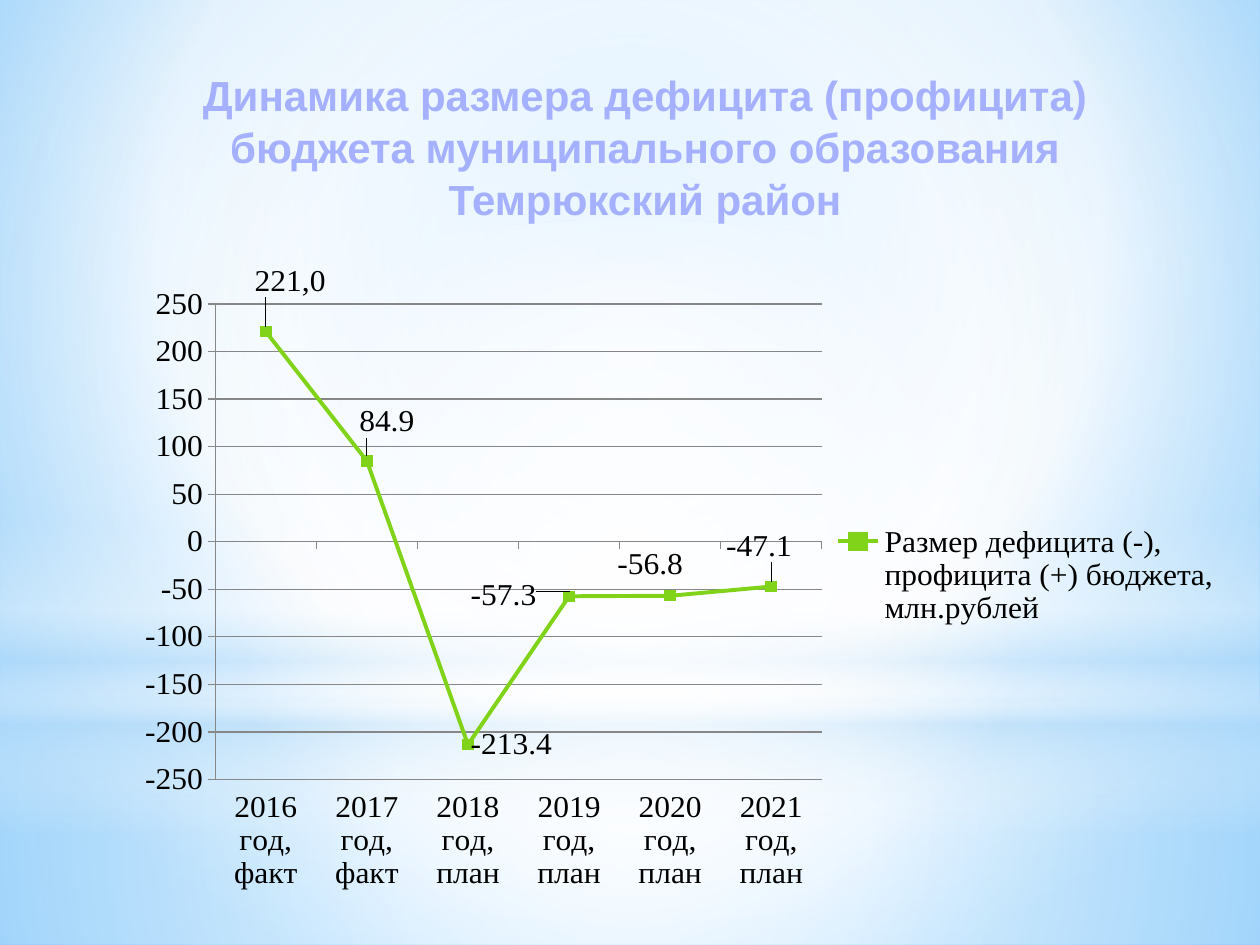
from dataclasses import dataclass
from typing import Optional

from lxml import etree
from pptx import Presentation
from pptx import util as u
from pptx.chart.data import CategoryChartData
from pptx.dml.color import RGBColor
from pptx.enum import chart as charts, shapes, text
from pptx.oxml import parse_xml
from pptx.oxml.ns import nsdecls, qn

PX = 914400 / 126
GREEN, BLACK, GREY, LILAC = "81D31A", "000000", "878787", "A5B0FF"
CENTRE = (50, 50, 50, 50)


@dataclass(frozen=True)
class Stop:
    at: int
    colour: str
    opacity: int = 100


@dataclass(frozen=True)
class Glow:
    """A borderless gradient area; a circle when focus is set, else top to bottom."""
    top: int
    height: int
    stops: tuple[Stop, ...]
    focus: Optional[tuple[int, int, int, int]] = CENTRE
    preset: shapes.MSO_SHAPE = shapes.MSO_SHAPE.RECTANGLE


@dataclass(frozen=True)
class Year:
    name: str
    balance: float
    label_dx: int
    label_dy: int
    label: str = ""


BACKDROP = (Stop(0, "9ED5FF"), Stop(60, "FFFFFF"), Stop(100, "5BB9FF"))
GLOWS = (
    Glow(703, 242, (Stop(0, "FFFFFF", 91), Stop(37, "FFFFFF", 76), Stop(100, "B4DCFA", 79))),
    Glow(0, 703, (Stop(0, "FFFFFF", 89), Stop(48, "FFFFFF", 62), Stop(100, "B4DCFA", 79))),
    Glow(519, 315, (Stop(0, "FFFFFF", 0), Stop(29, "FFFFFF", 30), Stop(45, "B4DCFA", 40),
                    Stop(55, "FFFFFF", 26), Stop(65, "B4DCFA", 60), Stop(100, "FFFFFF", 0)), None),
    Glow(220, 703, (Stop(0, "FFFFFF"), Stop(56, "FFFFFF", 0)), preset=shapes.MSO_SHAPE.OVAL),
)
YEARS = (
    Year("2016 год, факт", 221, 24, -25, "221,0"),
    Year("2017 год, факт", 84.9, 20, -14),
    Year("2018 год, план", -213.4, 43, 27),
    Year("2019 год, план", -57.3, -66, 26),
    Year("2020 год, план", -56.8, -20, -5),
    Year("2021 год, план", -47.1, -12, -15),
)
CHART_BOX = (123, 265, 1111, 625)


def px(length: int) -> u.Emu:
    return u.Emu(round(length * PX))


def rgb(colour: str) -> RGBColor:
    return RGBColor.from_string(colour)


def gradient(stops, focus):
    points = "".join(
        f'<a:gs pos="{s.at * 1000}"><a:srgbClr val="{s.colour}">'
        f'<a:alpha val="{s.opacity * 1000}"/></a:srgbClr></a:gs>' for s in stops)
    if focus:
        sides = " ".join(f'{side}="{part * 1000}"' for side, part in zip("ltrb", focus))
        course = f'<a:path path="circle"><a:fillToRect {sides}/></a:path>'
    else:
        course = '<a:lin ang="5400000" scaled="0"/>'
    return parse_xml(f'<a:gradFill {nsdecls("a")} rotWithShape="1">'
                     f'<a:gsLst>{points}</a:gsLst>{course}</a:gradFill>')


def set_gradient(fill, properties, stops, focus) -> None:
    fill.solid()
    solid = properties.find(qn("a:solidFill"))
    properties.replace(solid, gradient(stops, focus))


def add_glow(slide, glow: Glow) -> None:
    area = slide.shapes.add_shape(glow.preset, 0, px(glow.top), px(1260), px(glow.height))
    area.shadow.inherit = False
    area.line.fill.background()
    set_gradient(area.fill, area.element.spPr, glow.stops, glow.focus)


def add_title(slide) -> None:
    frame = slide.shapes.add_textbox(px(164), px(55), px(962), px(158)).text_frame
    frame.word_wrap = True
    frame.margin_top = px(12)
    frame.vertical_anchor = text.MSO_ANCHOR.TOP
    title = frame.paragraphs[0]
    title.text = ("Динамика размера дефицита (профицита) бюджета "
                  "муниципального образования Темрюкский район")
    title.alignment = text.PP_ALIGN.CENTER
    title.line_spacing = 1.04
    set_font(title.font, 24, "Arial", LILAC)
    title.font.bold = True


def set_font(font, size: int, name: str, colour: str) -> None:
    font.size = u.Pt(size)
    font.name = name
    font.color.rgb = rgb(colour)


def manual_layout(**settings):
    layout = etree.Element(qn("c:layout"))
    manual = etree.SubElement(layout, qn("c:manualLayout"))
    for key, value in settings.items():
        etree.SubElement(manual, qn(f"c:{key}")).set("val", str(value))
    return layout


def label_point(series, index: int, year: Year) -> None:
    label = series.points[index].data_label
    if year.label:
        label.text_frame.text = year.label
        font = label.text_frame.paragraphs[0].runs[0].font
    else:
        font = label.font
    set_font(font, 18, "Times New Roman", BLACK)
    label.position = charts.XL_LABEL_POSITION.ABOVE
    offset = manual_layout(x=round(year.label_dx / CHART_BOX[2], 3),
                           y=round(year.label_dy / CHART_BOX[3], 3))
    series._element.xpath(f"c:dLbls/c:dLbl/c:idx[@val='{index}']")[0].addnext(offset)


def add_balance_chart(slide) -> None:
    data = CategoryChartData()
    data.categories = [year.name for year in YEARS]
    data.add_series("Размер дефицита (-), профицита (+) бюджета, млн.рублей",
                    [year.balance for year in YEARS])
    chart = slide.shapes.add_chart(charts.XL_CHART_TYPE.LINE_MARKERS_STACKED,
                                   *map(px, CHART_BOX), data).chart
    set_font(chart.font, 18, "Times New Roman", BLACK)
    chart.has_title = False
    chart.has_legend = True
    chart.legend.position = charts.XL_LEGEND_POSITION.RIGHT
    chart.legend.include_in_layout = False

    plot_area = chart.element.chart.plotArea
    for automatic in plot_area.findall(qn("c:layout")):
        plot_area.remove(automatic)
    plot_area.insert(0, manual_layout(layoutTarget="inner", xMode="edge", yMode="edge",
                                      x=0.083, y=0.048, w=0.546, h=0.792))

    years, balance = chart.category_axis, chart.value_axis
    years.tick_label_position = charts.XL_TICK_LABEL_POSITION.LOW
    balance.minimum_scale, balance.maximum_scale, balance.major_unit = -250, 250, 50
    balance.has_major_gridlines = True
    for axis in (years, balance):
        axis.major_tick_mark = charts.XL_TICK_MARK.OUTSIDE
        axis.minor_tick_mark = charts.XL_TICK_MARK.NONE
    for line in (years.format.line, balance.format.line, balance.major_gridlines.format.line):
        line.color.rgb = rgb(GREY)
        line.width = u.Pt(0.75)

    chart.plots[0].vary_by_categories = False
    series = chart.plots[0].series[0]
    series.smooth = False
    series.format.line.color.rgb = rgb(GREEN)
    series.format.line.width = u.Pt(2.25)
    series.marker.style = charts.XL_MARKER_STYLE.SQUARE
    series.marker.size = 6
    series.marker.format.fill.solid()
    series.marker.format.fill.fore_color.rgb = rgb(GREEN)
    series.marker.format.line.color.rgb = rgb(GREEN)
    for index, year in enumerate(YEARS):
        label_point(series, index, year)


def main() -> None:
    deck = Presentation()
    deck.slide_width, deck.slide_height = px(1260), px(945)
    slide = deck.slides.add_slide(deck.slide_layouts[6])
    backdrop = slide.background.fill
    backdrop.solid()
    set_gradient(backdrop, slide.element.xpath("p:cSld/p:bg/p:bgPr")[0], BACKDROP, (20, 10, 20, 60))
    for glow in GLOWS:
        add_glow(slide, glow)
    add_title(slide)
    add_balance_chart(slide)
    deck.save("out.pptx")


if __name__ == "__main__":
    main()
